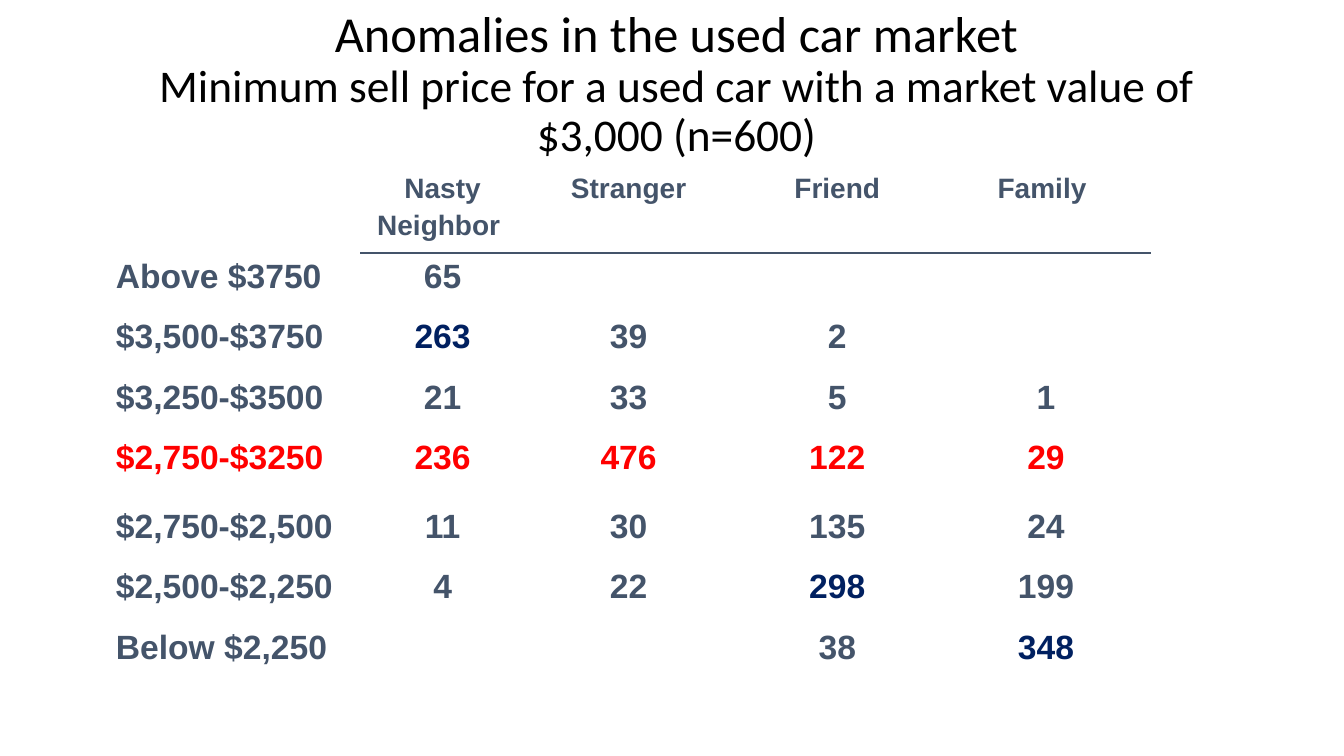
from dataclasses import dataclass

from lxml import etree
from pptx import Presentation
from pptx.dml.color import RGBColor
from pptx.enum.text import MSO_ANCHOR, PP_ALIGN
from pptx.oxml.ns import qn
from pptx.util import Inches, Pt

SLATE = RGBColor(0x44, 0x54, 0x6A)
NAVY = RGBColor(0x00, 0x20, 0x60)
RED = RGBColor(0xFF, 0x00, 0x00)
BLACK = RGBColor(0x00, 0x00, 0x00)
LEFT, CENTER = PP_ALIGN.LEFT, PP_ALIGN.CENTER
MIDDLE = MSO_ANCHOR.MIDDLE

BLANK_LAYOUT = 6
COLUMN_WIDTHS = (2.53, 1.62, 2.07, 2.07, 2.07)
HEADER_HEIGHT, ROW_HEIGHT, MARKET_ROW_HEIGHT = 0.84, 0.6, 0.68
HEADINGS = ("", "Nasty\nNeighbor ", "Stranger", "Friend", "Family ")


@dataclass(frozen=True)
class PriceRow:
    label: str
    counts: tuple[str, str, str, str]
    color: RGBColor = SLATE
    height: float = ROW_HEIGHT
    peak: str = ""  # the count shown in navy


PRICE_ROWS = (
    PriceRow("Above $3750", ("65", "", "", "")),
    PriceRow("$3,500-$3750", ("263", "39", "2", ""), peak="263"),
    PriceRow("$3,250-$3500", ("21", "33", "5", "1")),
    PriceRow("$2,750-$3250", ("236", "476", "122", "29"), RED, MARKET_ROW_HEIGHT),
    PriceRow("$2,750-$2,500", ("11", "30", "135", "24")),
    PriceRow("$2,500-$2,250", ("4", "22", "298", "199"), peak="298"),
    PriceRow("Below $2,250", ("", "", "38", "348"), peak="348"),
)


def write_run(paragraph, text: str, *, size: float, font: str = "Arial",
              color: RGBColor = SLATE, bold: bool = True) -> None:
    run = paragraph.add_run()
    run.text = text
    run.font.size = Pt(size)
    run.font.name = font
    run.font.bold = bold
    run.font.color.rgb = color


def write_cell(cell, text: str, *, size: float, align: PP_ALIGN = CENTER,
               color: RGBColor = SLATE) -> None:
    cell.fill.background()
    if not text:
        return
    for index, line in enumerate(text.split("\n")):
        if index == 0:
            paragraph = cell.text_frame.paragraphs[0]
        else:
            paragraph = cell.text_frame.add_paragraph()
            paragraph.space_before = Pt(size * 0.2)
        paragraph.alignment = align
        write_run(paragraph, line, size=size, color=color)


def add_border(cell, side: str) -> None:
    """Rule one side of the cell; side is the tag, a:lnT or a:lnB."""
    line = etree.Element(qn(side), w=str(Pt(1)))
    fill = etree.SubElement(line, qn("a:solidFill"))
    etree.SubElement(fill, qn("a:srgbClr"), val=str(SLATE))
    cell._tc.get_or_add_tcPr().insert(0, line)


def add_title(slide) -> None:
    shape = slide.shapes.add_textbox(Inches(0.96), Inches(0.12), Inches(11.5), Inches(1.45))
    frame = shape.text_frame
    frame.word_wrap = True
    frame.vertical_anchor = MIDDLE
    paragraph = frame.paragraphs[0]
    paragraph.alignment = CENTER
    paragraph.line_spacing = 0.9
    style = {"font": "Calibri", "color": BLACK, "bold": False}
    write_run(paragraph, "Anomalies in the used car market", size=36, **style)
    paragraph.add_line_break()
    write_run(paragraph, "Minimum sell price for a used car with a market value of $3,000 (n=600)",
              size=32.4, **style)


def add_price_table(slide) -> None:
    heights = [HEADER_HEIGHT] + [row.height for row in PRICE_ROWS]
    table = slide.shapes.add_table(
        len(heights), len(COLUMN_WIDTHS), Inches(1.05), Inches(1.67),
        Inches(sum(COLUMN_WIDTHS)), Inches(sum(heights))).table
    table.first_row = False
    table.horz_banding = False
    for column, width in zip(table.columns, COLUMN_WIDTHS):
        column.width = Inches(width)
    for table_row, height in zip(table.rows, heights):
        table_row.height = Inches(height)

    for column_index, heading in enumerate(HEADINGS):
        write_cell(table.cell(0, column_index), heading, size=20)
        if heading:
            add_border(table.cell(0, column_index), "a:lnB")
            add_border(table.cell(1, column_index), "a:lnT")

    for row_index, row in enumerate(PRICE_ROWS, start=1):
        write_cell(table.cell(row_index, 0), row.label, size=24, align=LEFT, color=row.color)
        for column_index, count in enumerate(row.counts, start=1):
            color = NAVY if count == row.peak else row.color
            write_cell(table.cell(row_index, column_index), count, size=24, color=color)


def main() -> None:
    presentation = Presentation()
    presentation.slide_width = Inches(13.33)
    presentation.slide_height = Inches(7.5)
    slide = presentation.slides.add_slide(presentation.slide_layouts[BLANK_LAYOUT])
    add_title(slide)
    add_price_table(slide)
    presentation.save("out.pptx")


if __name__ == "__main__":
    main()
